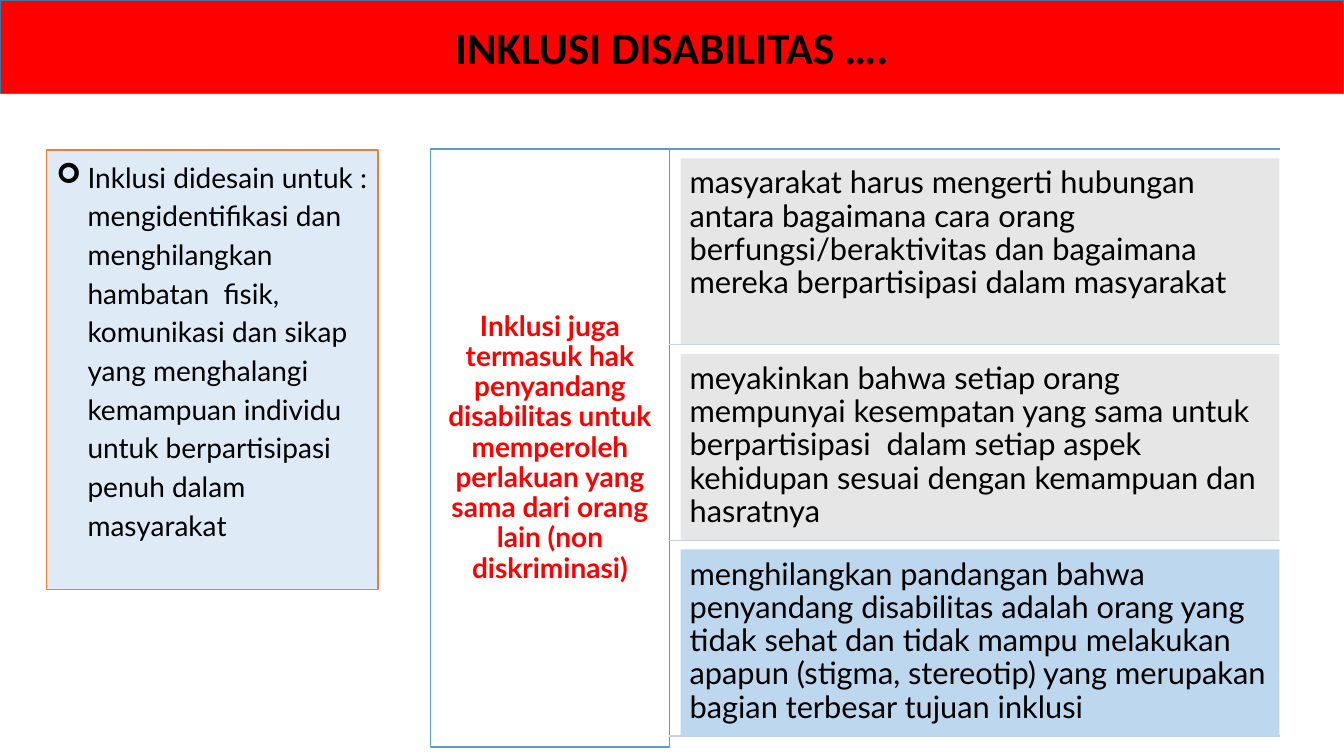
from lxml.etree import SubElement
from pptx import Presentation
from pptx.dml.color import RGBColor
from pptx.enum.shapes import MSO_CONNECTOR, MSO_SHAPE
from pptx.enum.text import MSO_ANCHOR, MSO_AUTO_SIZE, PP_ALIGN
from pptx.oxml.ns import qn
from pptx.util import Inches, Pt

BLACK = RGBColor(0x00, 0x00, 0x00)
RED = RGBColor(0xFF, 0x00, 0x00)
TITLE_EDGE = RGBColor(0x43, 0x73, 0x9E)
PALE_BLUE = RGBColor(0xDE, 0xEB, 0xF7)
ORANGE = RGBColor(0xED, 0x7D, 0x31)
BLUE = RGBColor(0x5B, 0x9B, 0xD5)
GREY = RGBColor(0xE7, 0xE6, 0xE6)
LIGHT_BLUE = RGBColor(0xBD, 0xD7, 0xEE)
RULE_BLUE = RGBColor(0xC4, 0xD5, 0xEB)


def style_box(box, text, size, fill=None, line=None, font="Lato", color=BLACK, bold=False,
              align=PP_ALIGN.LEFT, anchor=MSO_ANCHOR.TOP, inset=None, spacing=1.0):
    if fill is None:
        box.fill.background()
    else:
        box.fill.solid()
        box.fill.fore_color.rgb = fill
    if line is None:
        box.line.fill.background()
    else:
        box.line.color.rgb = line
        box.line.width = Pt(1)
    frame = box.text_frame
    frame.word_wrap = True
    frame.auto_size = MSO_AUTO_SIZE.NONE
    frame.vertical_anchor = anchor
    if inset is not None:
        for side in ("left", "top", "right", "bottom"):
            setattr(frame, f"margin_{side}", Inches(inset))
    para = frame.paragraphs[0]
    para.alignment = align
    para.line_spacing = spacing
    span = para.add_run()
    span.text = text
    for name, value in {"name": font, "size": Pt(size), "bold": bold}.items():
        setattr(span.font, name, value)
    span.font.color.rgb = color
    return para


def add_rule(left, right, top, color):
    rule = page.shapes.add_connector(
        MSO_CONNECTOR.STRAIGHT, Inches(left), Inches(top), Inches(right), Inches(top))
    rule.line.color.rgb = color
    rule.line.width = Pt(1)
    SubElement(rule.element.spPr, qn("a:effectLst"))


deck = Presentation()
deck.slide_width, deck.slide_height = Inches(13.33), Inches(7.5)
page = deck.slides.add_slide(deck.slide_layouts[5])

# Title band
title = page.shapes.title
title.left, title.top, title.width, title.height = 0, 0, deck.slide_width, Inches(0.93)
style_box(title, "INKLUSI DISABILITAS ….", 32, RED, TITLE_EDGE, font="Calibri", bold=True,
          align=PP_ALIGN.CENTER, anchor=MSO_ANCHOR.MIDDLE)

# Purpose box with an arrow bullet
purpose = page.shapes.add_shape(
    MSO_SHAPE.RECTANGLE, Inches(0.46), Inches(1.49), Inches(3.29), Inches(4.36))
purpose.shadow.inherit = False
para = style_box(
    purpose,
    "Inklusi didesain untuk : mengidentifikasi dan menghilangkan hambatan  fisik, "
    "komunikasi dan sikap yang menghalangi kemampuan individu untuk berpartisipasi "
    "penuh dalam masyarakat",
    20, PALE_BLUE, ORANGE, spacing=1.15)
properties = para._p.get_or_add_pPr()
properties.set("marL", str(Inches(0.31)))
properties.set("indent", str(Inches(-0.31)))
SubElement(properties, qn("a:buFont")).set("typeface", "Wingdings")
SubElement(properties, qn("a:buChar")).set("char", "➢")

# Rights panel
panel_left, panel_top, panel_width, rows_right = 4.27, 1.48, 2.37, 12.7
add_rule(panel_left, rows_right, panel_top, BLUE)
rights = page.shapes.add_shape(
    MSO_SHAPE.RECTANGLE, Inches(panel_left), Inches(panel_top), Inches(panel_width), Inches(5.93))
rights.shadow.inherit = False
style_box(
    rights,
    "Inklusi juga termasuk hak penyandang disabilitas untuk memperoleh perlakuan "
    "yang sama dari orang lain (non diskriminasi)",
    20, line=BLUE, color=RED, bold=True, align=PP_ALIGN.CENTER,
    anchor=MSO_ANCHOR.MIDDLE, inset=0.08, spacing=0.9)

# Three goals, each closed by a rule
goals = [
    ("masyarakat harus mengerti hubungan antara bagaimana cara orang "
     "berfungsi/beraktivitas dan bagaimana mereka berpartisipasi dalam masyarakat", GREY),
    ("meyakinkan bahwa setiap orang mempunyai kesempatan yang sama untuk berpartisipasi  "
     "dalam setiap aspek kehidupan sesuai dengan kemampuan dan hasratnya", GREY),
    ("menghilangkan pandangan bahwa penyandang disabilitas adalah orang yang tidak sehat "
     "dan tidak mampu melakukan apapun (stigma, stereotip) yang merupakan bagian terbesar "
     "tujuan inklusi", LIGHT_BLUE),
]
goal_height, gap = 1.85, 0.09
pitch = goal_height + gap
for index, (text, fill) in enumerate(goals):
    goal_top = panel_top + gap + index * pitch
    goal = page.shapes.add_shape(
        MSO_SHAPE.RECTANGLE, Inches(6.75), Inches(goal_top), Inches(5.94), Inches(goal_height))
    goal.shadow.inherit = False
    style_box(goal, text, 22, fill, inset=0.09, spacing=0.9)
    add_rule(panel_left + panel_width, rows_right, goal_top + goal_height, RULE_BLUE)

deck.save("out.pptx")
